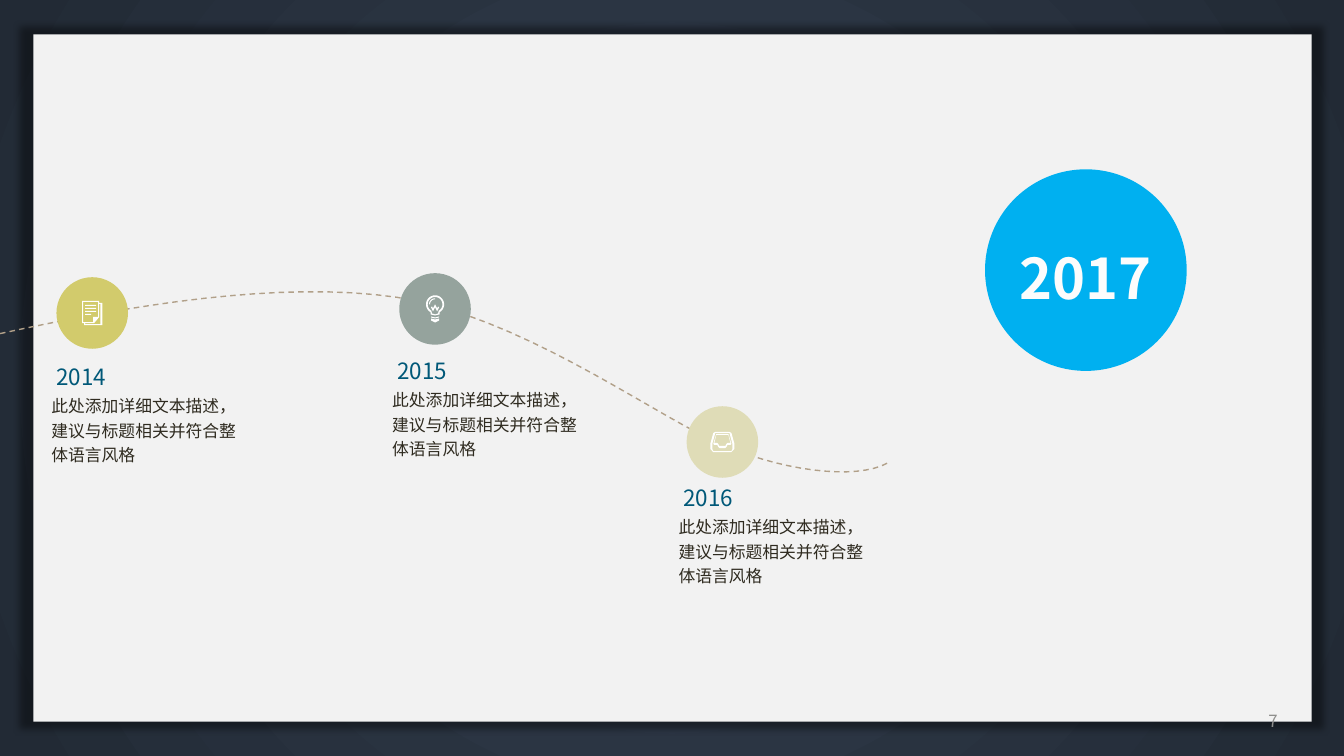
from dataclasses import dataclass
from math import cos, radians, sin

from lxml.etree import SubElement
from pptx import Presentation
from pptx.dml.color import RGBColor
from pptx.enum.dml import MSO_LINE
from pptx.enum.shapes import MSO_SHAPE
from pptx.enum.text import MSO_ANCHOR, MSO_AUTO_SIZE, PP_ALIGN
from pptx.oxml.ns import qn
from pptx.util import Inches, Pt


@dataclass(frozen=True)
class Theme:
    """Colours, font and type sizes of the slide."""
    font: str = "Noto Sans CJK SC"
    glow: str = "333F50"
    edge: str = "222A35"
    panel: str = "F2F2F2"
    curve: str = "B1A089"
    year: str = "005878"
    body: str = "2F2B20"
    icon: str = "FFFFFF"
    olive: str = "D2CB6C"
    sage: str = "95A39D"
    sand: str = "DFDCB7"
    goal: str = "00B0F0"
    goal_text: str = "FCFCFC"
    number: str = "8F8F8D"
    small: int = 12
    medium: int = 16
    large: int = 40


THEME = Theme()
DISC = 0.71
DESCRIPTION = "此处添加详细文本描述，建议与标题相关并符合整体语言风格"


def arc(radius, start, end, steps=24):
    """Return points on an arc of the bulb's head, in hundredths of an inch."""
    angles = [radians(start + (end - start) * i / steps) for i in range(steps + 1)]
    return [(9 + radius * cos(a), 9 + radius * sin(a)) for a in angles]


def bar(left, top, width):
    """Return the corners of one text line of the document icon."""
    return [(left, top), (left + width, top), (left + width, top + 1), (left, top + 1)]


DOCUMENT = [
    [(17, 2), (17, 0), (0, 0), (0, 22), (2, 22), (2, 24), (20, 24), (20, 2)],
    [(1, 21), (1, 1), (16, 1), (16, 16), (11, 16), (11, 21)],
    [(18, 23), (3, 23), (3, 22), (12, 22), (17, 16), (17, 3), (18, 3)],
    bar(3, 4, 11), bar(3, 7, 11), bar(3, 10, 11), bar(3, 13, 6),
]
BULB = [
    arc(9, 120, 420) + [(13.5, 19), (9, 20), (4.5, 19)],
    arc(7.3, 120, 420) + [(12, 18), (9, 19), (6, 18)],
    arc(6, 180, 270) + arc(5, 270, 180),
    [(11, 13), (9, 9), (7, 13), (6, 11), (5, 12), (7, 16), (9, 12), (11, 16),
     (13, 12), (12, 11)],
    [(5, 21), (9, 22), (13, 21), (13, 22), (9, 23), (5, 22)],
    [(5, 23), (9, 24), (13, 23), (13, 25), (11, 26), (9, 27), (7, 26), (5, 25)],
]
TRAY = [
    [(0, 12), (3, 1), (5, 0), (19, 0), (21, 1), (24, 12), (24, 17), (21, 20),
     (3, 20), (0, 17)],
    [(2, 12), (5, 1), (19, 1), (22, 12), (22, 17), (21, 19), (3, 19), (2, 17)],
    [(6, 2), (18, 2), (21, 12), (20, 13), (17, 13), (16, 15), (15, 16), (9, 16),
     (8, 15), (7, 13), (4, 13), (3, 12)],
    [(6, 3), (18, 3), (20, 11), (17, 11), (16, 12), (15, 14), (9, 14), (8, 12),
     (7, 11), (4, 11)],
]


def colour(code):
    """Turn a hex code into a colour."""
    return RGBColor.from_string(code)


def add_filled(page, kind, left, top, width, height, fill):
    """Add a flat preset shape."""
    shape = page.shapes.add_shape(kind, Inches(left), Inches(top), Inches(width), Inches(height))
    shape.shadow.inherit = False
    shape.fill.solid()
    shape.fill.fore_color.rgb = colour(fill)
    shape.line.fill.background()
    return shape


def add_outline(page, contours, left=0, top=0, close=True):
    """Add one freeform made of contours given in inches from left and top."""
    paths = [[(Inches(x), Inches(y)) for x, y in contour] for contour in contours]
    builder = page.shapes.build_freeform(*paths[0][0])
    for path in paths:
        builder.move_to(*path[0])
        builder.add_line_segments(path[1:], close=close)
    shape = builder.convert_to_shape(Inches(left), Inches(top))
    shape.shadow.inherit = False
    return shape


def write(box, text, size, fill, inset, bold=False, align=PP_ALIGN.LEFT,
          anchor=MSO_ANCHOR.TOP, spacing=1.0):
    """Fill a box with one formatted paragraph."""
    frame = box.text_frame
    frame.word_wrap = True
    frame.auto_size = MSO_AUTO_SIZE.NONE
    frame.vertical_anchor = anchor
    frame.margin_left = frame.margin_right = Inches(inset)
    frame.margin_top = frame.margin_bottom = Inches(inset)
    para = frame.paragraphs[0]
    para.text = text
    para.alignment = align
    para.line_spacing = spacing
    para.font.size = Pt(size)
    para.font.bold = bold
    para.font.color.rgb = colour(fill)
    para.font.name = THEME.font
    for properties in box.element.iter(qn("a:defRPr")):
        SubElement(properties, qn("a:ea"), typeface=THEME.font)


def add_label(page, left, top, width, height, *text, **style):
    """Add a text box with one formatted paragraph."""
    box = page.shapes.add_textbox(Inches(left), Inches(top), Inches(width), Inches(height))
    write(box, *text, **style)


def draw_backdrop(page, left, top, width, height):
    """Draw the radial background and the shadowed panel."""
    fill = page.background.fill
    fill.gradient()
    for stop, position, code in zip(fill.gradient_stops, (0, 1), (THEME.glow, THEME.edge)):
        stop.position = position
        stop.color.rgb = colour(code)
    linear = page.element.find(".//" + qn("a:lin"))
    gradient = linear.getparent()
    gradient.remove(linear)
    radial = SubElement(gradient, qn("a:path"), path="circle")
    SubElement(radial, qn("a:fillToRect"), dict.fromkeys("ltrb", "50000"))

    panel = add_filled(page, MSO_SHAPE.RECTANGLE, left, top, width, height, THEME.panel)
    effects = panel.element.find(".//" + qn("a:effectLst"))
    shadow = SubElement(effects, qn("a:outerShdw"), blurRad=str(Pt(5)), sx="102000",
                        sy="102000", algn="ctr", rotWithShape="0")
    black = SubElement(shadow, qn("a:srgbClr"), val="000000")
    SubElement(black, qn("a:alpha"), val="40000")


def draw_curve(page, start, segments, steps=16):
    """Draw the dashed timeline through cubic segments."""
    points = [start]
    for first, second, end in segments:
        corners = (points[-1], first, second, end)
        for step in range(1, steps + 1):
            t = step / steps
            weights = ((1 - t) ** 3, 3 * t * (1 - t) ** 2, 3 * t * t * (1 - t), t ** 3)
            points.append(tuple(sum(w * corner[axis] for w, corner in zip(weights, corners))
                                for axis in (0, 1)))
    curve = add_outline(page, [points], close=False)
    curve.fill.background()
    curve.line.color.rgb = colour(THEME.curve)
    curve.line.width = Pt(1)
    curve.line.dash_style = MSO_LINE.DASH


def draw_milestone(page, left, top, text_left, text_top, year, fill, icon):
    """Draw a disc with its centred icon, and the year and description below."""
    add_filled(page, MSO_SHAPE.OVAL, left, top, DISC, DISC, fill)
    width, height = (max(point[axis] for contour in icon for point in contour) / 100
                     for axis in (0, 1))
    contours = [[(x / 100, y / 100) for x, y in contour] for contour in icon]
    symbol = add_outline(page, contours, left + (DISC - width) / 2, top + (DISC - height) / 2)
    symbol.fill.solid()
    symbol.fill.fore_color.rgb = colour(THEME.icon)
    symbol.line.fill.background()
    add_label(page, text_left, text_top, 1.69, 0.37, year, THEME.medium, THEME.year, inset=0.05)
    add_label(page, text_left, text_top + 0.34, 1.84, 1.35, DESCRIPTION, THEME.small,
              THEME.body, inset=0, spacing=1.2)


def draw_goal(page, left, top, size):
    """Draw the large disc with the goal year as the slide title."""
    add_filled(page, MSO_SHAPE.OVAL, left, top, size, size, THEME.goal)
    title = page.shapes.title
    title.left, title.top = Inches(left + 0.15), Inches(top + 0.69)
    title.width, title.height = Inches(1.69), Inches(0.77)
    write(title, "2017", THEME.large, THEME.goal_text, inset=0.05, bold=True,
          align=PP_ALIGN.CENTER)
    title.element.getparent().append(title.element)


def main():
    """Build the timeline slide and save the deck."""
    deck = Presentation()
    deck.slide_width, deck.slide_height = Inches(13.33), Inches(7.5)
    page = deck.slides.add_slide(deck.slide_layouts[5])
    draw_backdrop(page, 0.33, 0.34, 12.68, 6.82)
    draw_curve(page, (0, 3.31), [
        ((1.29, 3.03), (2.77, 2.78), (3.94, 2.95)),
        ((5.12, 3.13), (6.38, 4.04), (7.05, 4.36)),
        ((7.72, 4.68), (8.5, 4.77), (8.81, 4.59)),
    ])
    draw_milestone(page, 0.56, 2.75, 0.51, 3.55, "2014", THEME.olive, DOCUMENT)
    draw_milestone(page, 3.96, 2.71, 3.89, 3.49, "2015", THEME.sage, BULB)
    draw_milestone(page, 6.81, 4.03, 6.73, 4.75, "2016", THEME.sand, TRAY)
    draw_goal(page, 9.77, 1.68, 2)
    add_label(page, 12.25, 6.95, 0.52, 0.4, "7", THEME.small, THEME.number, inset=0.1,
              align=PP_ALIGN.RIGHT, anchor=MSO_ANCHOR.MIDDLE)
    deck.save("out.pptx")


if __name__ == "__main__":
    main()
